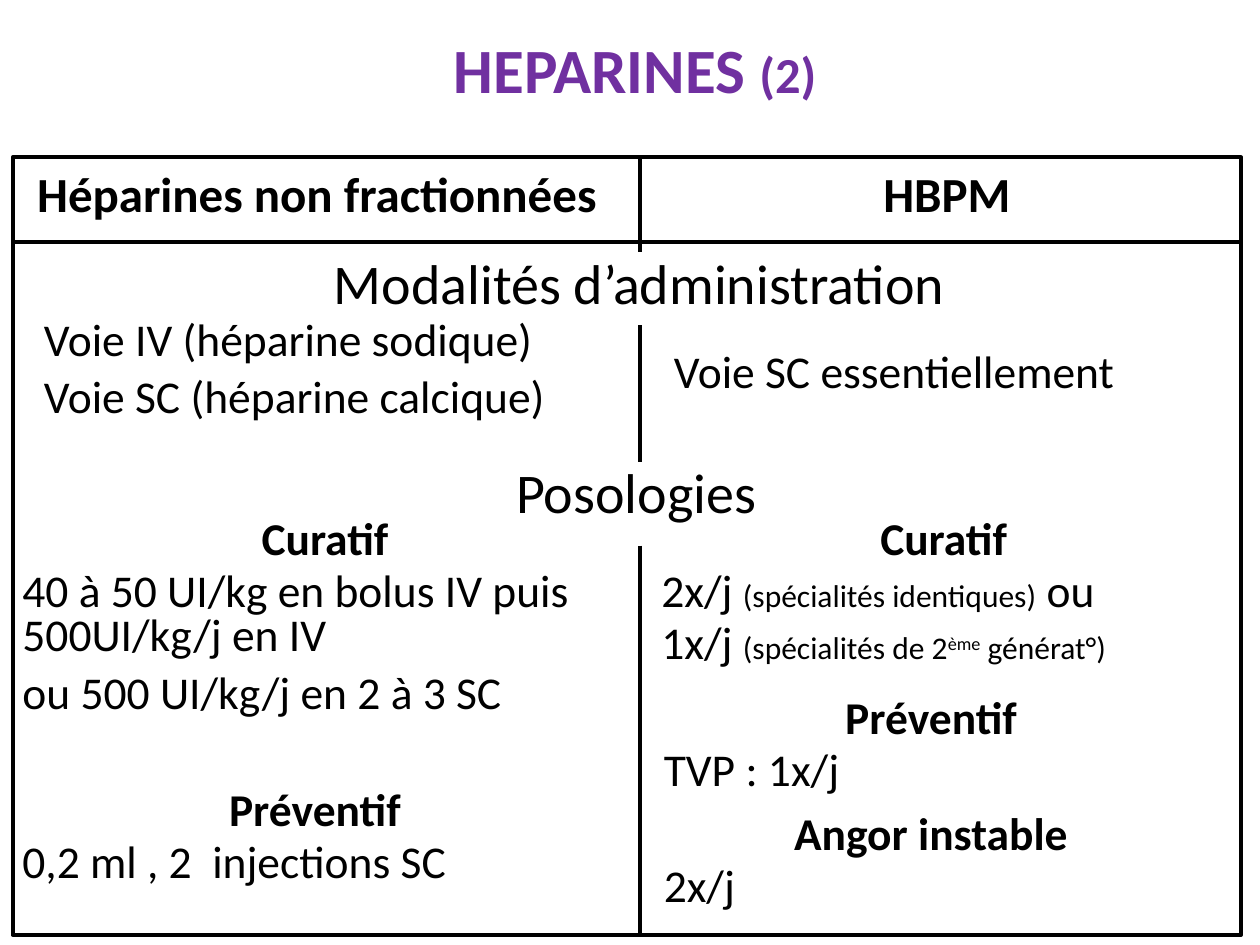
from dataclasses import dataclass

from lxml.etree import SubElement
from pptx import Presentation
from pptx.dml.color import RGBColor
from pptx.enum.shapes import MSO_CONNECTOR as Connector, MSO_SHAPE as Preset
from pptx.enum.text import MSO_ANCHOR as Anchor, MSO_AUTO_SIZE as AutoSize, PP_ALIGN as Align
from pptx.oxml.ns import qn
from pptx.util import Inches, Pt


@dataclass(frozen=True)
class Theme:
    font: str = "Calibri"
    ink: RGBColor = RGBColor(0, 0, 0)
    accent: RGBColor = RGBColor(0x70, 0x30, 0xA0)
    title: float = 36
    title_number: float = 28.8
    section: float = 32
    heading: float = 28
    body: float = 26
    detail: float = 18
    line: float = 2.25


THEME = Theme()


@dataclass(frozen=True)
class Run:
    text: str
    size: float = THEME.body
    bold: bool = False
    color: RGBColor = THEME.ink
    superscript: bool = False


@dataclass(frozen=True)
class Line:
    runs: tuple[Run, ...]
    align: Align = Align.LEFT
    before: float = 5


@dataclass(frozen=True)
class Block:
    left: float
    top: float
    width: float
    height: float
    lines: tuple[Line, ...]
    spacing: float = 1.0


def text_line(text: str, *, size: float = THEME.body, bold: bool = False,
              centered: bool = False, before: float = 5) -> Line:
    align = Align.CENTER if centered else Align.LEFT
    return Line((Run(text, size, bold),), align, before)


def subheading(text: str) -> Line:
    return text_line(text, bold=True, centered=True)


def write_lines(frame, lines: tuple[Line, ...], spacing: float = 1.0) -> None:
    frame.word_wrap = True
    frame.auto_size = AutoSize.NONE
    for index, line in enumerate(lines):
        paragraph = frame.add_paragraph() if index else frame.paragraphs[0]
        paragraph.alignment = line.align
        paragraph.line_spacing = spacing
        paragraph.space_before = Pt(line.before if index else 0)
        for item in line.runs:
            run = paragraph.add_run()
            run.text = item.text
            run.font.name = THEME.font
            run.font.size = Pt(item.size)
            run.font.bold = item.bold
            run.font.color.rgb = item.color
            if item.superscript:
                run._r.get_or_add_rPr().set("baseline", "30000")


def draw_block(slide, block: Block) -> None:
    box = slide.shapes.add_textbox(
        Inches(block.left), Inches(block.top), Inches(block.width), Inches(block.height))
    write_lines(box.text_frame, block.lines, block.spacing)


def draw_rule(slide, x1: float, y1: float, x2: float, y2: float) -> None:
    rule = slide.shapes.add_connector(
        Connector.STRAIGHT, Inches(x1), Inches(y1), Inches(x2), Inches(y2))
    rule.line.color.rgb = THEME.ink
    rule.line.width = Pt(THEME.line)
    SubElement(rule._element.spPr, qn("a:effectLst"))


def draw_frame(slide, left: float, top: float, right: float, bottom: float) -> None:
    frame = slide.shapes.add_shape(
        Preset.RECTANGLE, Inches(left), Inches(top), Inches(right - left), Inches(bottom - top))
    frame.shadow.inherit = False
    frame.fill.background()
    frame.line.color.rgb = THEME.ink
    frame.line.width = Pt(THEME.line)


def draw_title(slide) -> None:
    title = slide.shapes.title
    title.left, title.top = Inches(0.08), Inches(0.17)
    title.width, title.height = Inches(9.92), Inches(0.75)
    title.text_frame.vertical_anchor = Anchor.MIDDLE
    write_lines(title.text_frame, (Line((
        Run("HEPARINES ", THEME.title, True, THEME.accent),
        Run("(2)", THEME.title_number, True, THEME.accent),
    ), Align.CENTER),))


LEFT, TOP, RIGHT, BOTTOM = 0.1, 1.25, 9.85, 7.42
MIDDLE, HEADER_BOTTOM = 5.08, 1.92
DIVIDERS = ((TOP, 2.0), (2.58, 3.67), (4.33, BOTTOM))
TIGHT = 0.8

HEADINGS = (
    Block(LEFT, TOP, 4.83, 0.75, (text_line(
        "Héparines non fractionnées", size=THEME.heading, bold=True, centered=True),)),
    Block(5.18, TOP, 4.67, 0.67, (text_line(
        "HBPM", size=THEME.heading, bold=True, centered=True),)),
    Block(2.07, HEADER_BOTTOM, 6.01, 0.75, (text_line(
        "Modalités d’administration", size=THEME.section, centered=True),)),
    Block(3.35, 3.58, 3.4, 0.75, (text_line(
        "Posologies", size=THEME.section, centered=True),)),
)

ROUTES = (
    Block(0.25, 2.42, 4.75, 0.46, (text_line("Voie IV (héparine sodique)"),)),
    Block(0.25, 2.87, 4.75, 0.46, (text_line("Voie SC (héparine calcique)"),)),
    Block(5.25, 2.67, 4.29, 0.46, (text_line("Voie SC essentiellement"),)),
)

DOSAGES = (
    Block(0.08, 4.08, 5, 1.75, (
        subheading("Curatif"),
        text_line("40 à 50 UI/kg en bolus IV puis 500UI/kg/j en IV"),
        text_line("ou 500 UI/kg/j en 2 à 3 SC", before=8.5),
    ), TIGHT),
    Block(0.08, 6.23, 4.84, 0.94, (
        subheading("Préventif"),
        text_line("0,2 ml , 2  injections SC"),
    ), TIGHT),
    Block(5.15, 4.08, 4.68, 1.33, (
        subheading("Curatif"),
        Line((Run("2x/j "), Run("(spécialités identiques)", THEME.detail), Run(" ou"))),
        Line((Run("1x/j "), Run("(spécialités de 2", THEME.detail),
              Run("ème", THEME.detail, superscript=True),
              Run(" générat°)", THEME.detail))),
    ), TIGHT),
    Block(5.17, 5.5, 4.44, 0.88, (
        subheading("Préventif"), text_line("TVP : 1x/j")), TIGHT),
    Block(5.17, 6.42, 4.44, 0.88, (
        subheading("Angor instable"), text_line("2x/j")), TIGHT),
)


def main() -> None:
    presentation = Presentation()
    presentation.slide_width, presentation.slide_height = Inches(10), Inches(7.5)
    slide = presentation.slides.add_slide(presentation.slide_layouts.get_by_name("Title Only"))
    draw_title(slide)
    draw_frame(slide, LEFT, TOP, RIGHT, BOTTOM)
    draw_rule(slide, LEFT, HEADER_BOTTOM, RIGHT, HEADER_BOTTOM)
    for start, end in DIVIDERS:
        draw_rule(slide, MIDDLE, start, MIDDLE, end)
    for block in HEADINGS + ROUTES + DOSAGES:
        draw_block(slide, block)
    presentation.save("out.pptx")


if __name__ == "__main__":
    main()
